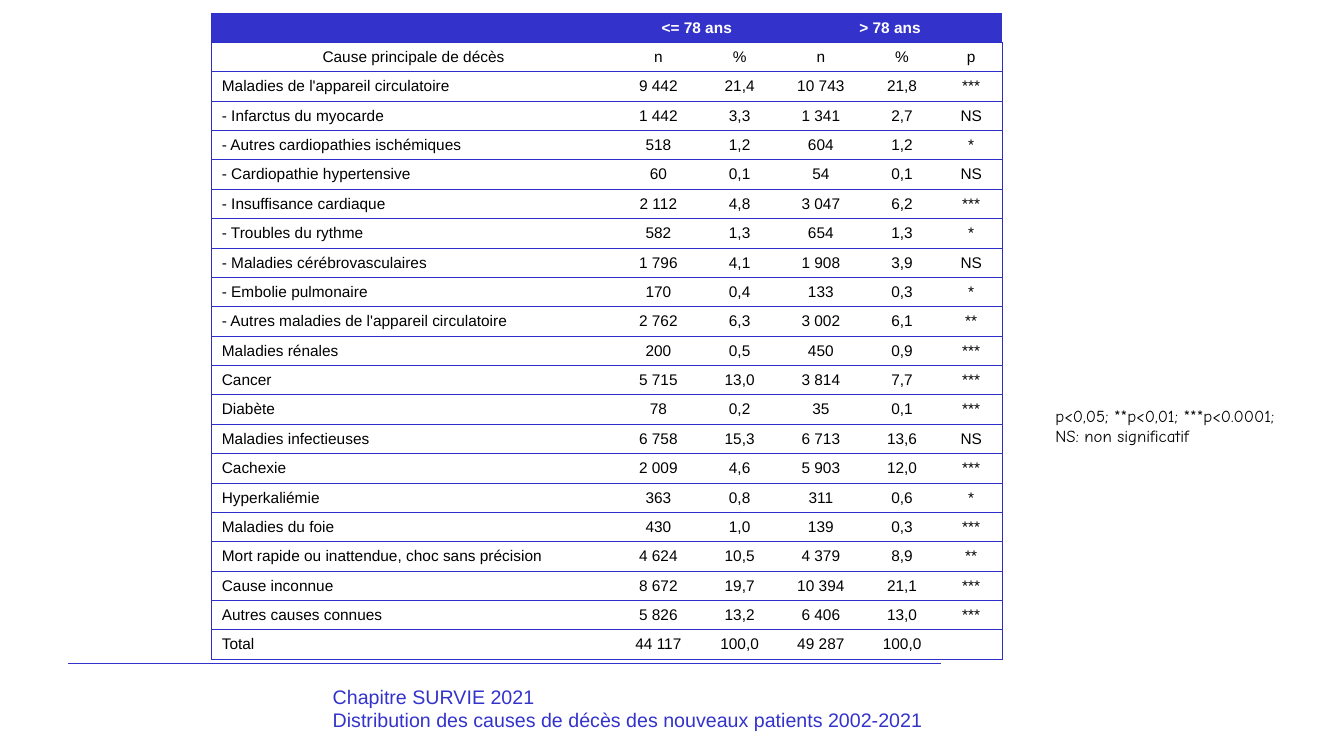
from lxml.etree import SubElement
from pptx import Presentation
from pptx.dml.color import RGBColor
from pptx.enum.shapes import MSO_CONNECTOR as Connector
from pptx.enum.text import MSO_ANCHOR as Anchor, MSO_AUTO_SIZE as AutoSize, PP_ALIGN as Align
from pptx.oxml.ns import qn
from pptx.util import Inches, Pt

BLUE, BORDER, BLACK, WHITE = "3333CC", "2E2ECB", "000000", "FFFFFF"
COLUMN_WIDTHS = (4, 0.85, 0.76, 0.85, 0.76, 0.61)
CAUSES = [
    ("", "<= 78 ans", "", "> 78 ans", "", ""),
    ("Cause principale de décès", "n", "%", "n", "%", "p"),
    ("Maladies de l'appareil circulatoire", "9 442", "21,4", "10 743", "21,8", "***"),
    ("- Infarctus du myocarde", "1 442", "3,3", "1 341", "2,7", "NS"),
    ("- Autres cardiopathies ischémiques", "518", "1,2", "604", "1,2", "*"),
    ("- Cardiopathie hypertensive", "60", "0,1", "54", "0,1", "NS"),
    ("- Insuffisance cardiaque", "2 112", "4,8", "3 047", "6,2", "***"),
    ("- Troubles du rythme", "582", "1,3", "654", "1,3", "*"),
    ("- Maladies cérébrovasculaires", "1 796", "4,1", "1 908", "3,9", "NS"),
    ("- Embolie pulmonaire", "170", "0,4", "133", "0,3", "*"),
    ("- Autres maladies de l'appareil circulatoire", "2 762", "6,3", "3 002", "6,1", "**"),
    ("Maladies rénales", "200", "0,5", "450", "0,9", "***"),
    ("Cancer", "5 715", "13,0", "3 814", "7,7", "***"),
    ("Diabète", "78", "0,2", "35", "0,1", "***"),
    ("Maladies infectieuses", "6 758", "15,3", "6 713", "13,6", "NS"),
    ("Cachexie", "2 009", "4,6", "5 903", "12,0", "***"),
    ("Hyperkaliémie", "363", "0,8", "311", "0,6", "*"),
    ("Maladies du foie", "430", "1,0", "139", "0,3", "***"),
    ("Mort rapide ou inattendue, choc sans précision", "4 624", "10,5", "4 379", "8,9", "**"),
    ("Cause inconnue", "8 672", "19,7", "10 394", "21,1", "***"),
    ("Autres causes connues", "5 826", "13,2", "6 406", "13,0", "***"),
    ("Total", "44 117", "100,0", "49 287", "100,0", ""),
]


def rgb(hex_color):
    """Turn a hex string into a colour."""
    return RGBColor.from_string(hex_color)


def style(paragraph, size, color, font="Arial", bold=False, align=Align.LEFT):
    """Set the font and alignment of a paragraph."""
    paragraph.alignment = align
    paragraph.font.size = Pt(size)
    paragraph.font.name = font
    paragraph.font.bold = bold
    paragraph.font.color.rgb = rgb(color)


def draw_borders(cell, visible_sides):
    """Draw the visible sides of a cell and hide the others."""
    properties = cell._tc.get_or_add_tcPr()
    for side in "LRTB":
        edge = SubElement(properties, qn(f"a:ln{side}"), w=str(Pt(0.75)))
        if side in visible_sides:
            fill = SubElement(edge, qn("a:solidFill"))
            SubElement(fill, qn("a:srgbClr"), val=BORDER)
        else:
            SubElement(edge, qn("a:noFill"))


def fill_cell(cell, text, row, column):
    """Write and format one cell of the causes table."""
    last = len(COLUMN_WIDTHS) - 1
    draw_borders(cell, "TB" + {0: "L", last: "R"}.get(column, ""))
    cell.fill.solid()
    cell.fill.fore_color.rgb = rgb(WHITE if row else BLUE)
    cell.vertical_anchor = Anchor.MIDDLE
    paragraph = cell.text_frame.paragraphs[0]
    if text:
        paragraph.text = text
    else:
        SubElement(paragraph._p, qn("a:endParaRPr"), sz="1100")
    left_aligned = column == 0 and row > 1
    style(paragraph, 11, BLACK if row else WHITE, bold=row == 0,
          align=Align.LEFT if left_aligned else Align.CENTER)


def add_causes_table(slide, left, top, width, height):
    """Place the table of causes of death by age group."""
    table = slide.shapes.add_table(
        len(CAUSES), len(COLUMN_WIDTHS),
        Inches(left), Inches(top), Inches(width), Inches(height)).table
    table.first_row = table.horz_banding = False
    for column, share in zip(table.columns, COLUMN_WIDTHS):
        column.width = Inches(width * share / sum(COLUMN_WIDTHS))
    for row in table.rows:
        row.height = Inches(height / len(CAUSES))
    for row, values in enumerate(CAUSES):
        for column, text in enumerate(values):
            fill_cell(table.cell(row, column), text, row, column)
    table.cell(0, 1).merge(table.cell(0, 2))
    table.cell(0, 3).merge(table.cell(0, 5))


def add_footer_rule(slide, left, top, width):
    """Place the thin rule above the title."""
    rule = slide.shapes.add_connector(
        Connector.STRAIGHT, Inches(left), Inches(top), Inches(left + width), Inches(top))
    rule.line.color.rgb = rgb(BLUE)
    rule.line.width = Pt(1)
    SubElement(rule._element.spPr, qn("a:effectLst"))


def write_lines(frame, lines, **font):
    """Write one formatted paragraph for each line."""
    frame.text = "\n".join(lines)
    for paragraph in frame.paragraphs:
        style(paragraph, **font)


def place_title(slide, left, top, width, height):
    """Move the title placeholder to the foot of the slide and fill it."""
    title = slide.shapes.title
    title.left, title.top = Inches(left), Inches(top)
    title.width, title.height = Inches(width), Inches(height)
    frame = title.text_frame
    frame.auto_size = AutoSize.NONE
    frame.vertical_anchor = Anchor.TOP
    write_lines(frame, ("Chapitre SURVIE 2021",
                        "Distribution des causes de décès des nouveaux patients 2002-2021"),
                size=14, color=BLUE)


def add_significance_note(slide, left, top, width, height):
    """Place the key to the significance marks."""
    note = slide.shapes.add_textbox(Inches(left), Inches(top), Inches(width), Inches(height))
    frame = note.text_frame
    frame.word_wrap = False
    frame.vertical_anchor = Anchor.BOTTOM
    write_lines(frame, ("p<0,05; **p<0,01; ***p<0.0001;", "NS: non significatif"),
                size=12, color=BLACK, font="Comic Neue")


def main():
    """Build and save the presentation."""
    presentation = Presentation()
    presentation.slide_width, presentation.slide_height = Inches(13.33), Inches(7.5)
    slide = presentation.slides.add_slide(presentation.slide_layouts[5])
    add_footer_rule(slide, 0.67, 6.58, 8.66)
    add_causes_table(slide, 2.1, 0.13, 7.84, 6.41)
    place_title(slide, 3.2, 6.74, 7.62, 0.57)
    add_significance_note(slide, 10.37, 3.97, 2.64, 0.5)
    presentation.save("out.pptx")


if __name__ == "__main__":
    main()
